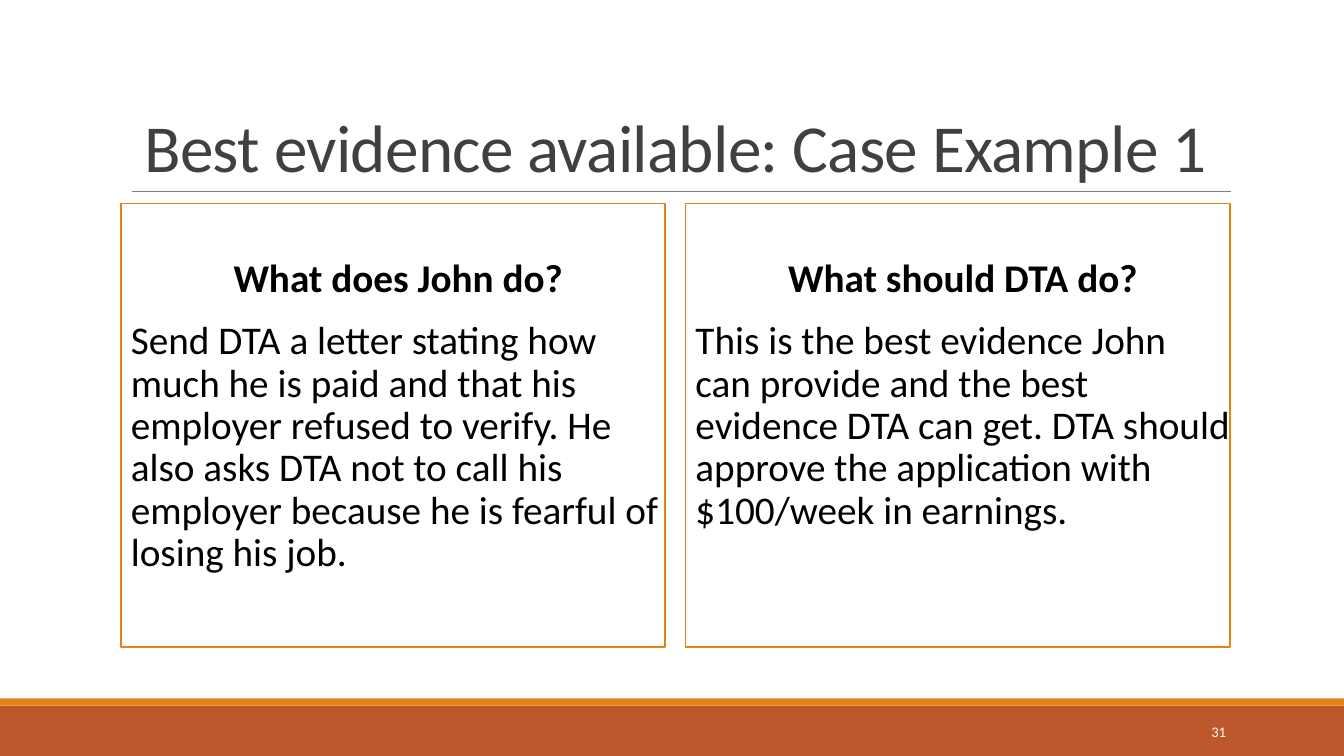
from pptx import Presentation, util as u
from pptx.dml.color import RGBColor
from pptx.enum import shapes, text
from pptx.oxml import ns
from lxml import etree

SCALE = 9144
CARDS = [
    ("What does John do?",
     "Send DTA a letter stating how much he is paid and that his employer refused to verify. "
     "He also asks DTA not to call his employer because he is fearful of losing his job."),
    ("What should DTA do?",
     "This is the best evidence John can provide and the best evidence DTA can get. "
     "DTA should approve the application with $100/week in earnings."),
]


def px(*lengths):
    return [u.Emu(n * SCALE) for n in lengths]


def color(value):
    return RGBColor.from_string(value)


def apply(target, formats):
    for name, value in formats.items():
        setattr(target, name, value)


def add_rect(s, box, fill, line=None):
    sp = s.shapes.add_shape(shapes.MSO_SHAPE.RECTANGLE, *px(*box))
    sp.shadow.inherit = False
    sp.fill.solid()
    sp.fill.fore_color.rgb = color(fill)
    if line:
        sp.line.color.rgb = color(line)
        sp.line.width = u.Pt(1.25)
    else:
        sp.line.fill.background()
    return sp


def add_rule(s, x1, y1, x2, y2):
    c = s.shapes.add_connector(shapes.MSO_CONNECTOR.STRAIGHT, *px(x1, y1, x2, y2))
    c.line.color.rgb = color("808080")
    c.line.width = u.Pt(0.5)
    etree.SubElement(c.element.spPr, ns.qn("a:effectLst"))


def write(p, words, size, fill, formats, bold=False):
    r = p.add_run()
    r.text = words
    apply(r.font, {"name": "Calibri", "size": u.Pt(size), "bold": bold})
    r.font.color.rgb = color(fill)
    apply(p, formats)
    return r


def frame(sp, anchor, margins=(10, 5, 10, 5)):
    tf = sp.text_frame
    left, top, right, bottom = px(*margins)
    apply(tf, {"word_wrap": True, "auto_size": text.MSO_AUTO_SIZE.NONE,
               "vertical_anchor": anchor, "margin_left": left, "margin_top": top,
               "margin_right": right, "margin_bottom": bottom})
    return tf


def set_title(s, words):
    sp = s.shapes.title
    apply(sp, dict(zip(("left", "top", "width", "height"), px(120, 31, 1100, 159))))
    tf = frame(sp, text.MSO_ANCHOR.BOTTOM)
    r = write(tf.paragraphs[0], words, 48, "404040",
              {"alignment": text.PP_ALIGN.CENTER, "line_spacing": 0.85})
    r.font._element.set("spc", "-50")


def add_card(s, left, heading, body):
    sp = add_rect(s, (left, 202, 540, 440), "FFFFFF", "E48312")
    tf = frame(sp, text.MSO_ANCHOR.TOP, (10, 55, 0, 5))
    spacing = {"line_spacing": 0.9, "space_after": u.Pt(2)}
    write(tf.paragraphs[0], heading, 28, "000000",
          {**spacing, "alignment": text.PP_ALIGN.CENTER, "space_before": u.Pt(0)}, True)
    write(tf.add_paragraph(), body, 28, "000000",
          {**spacing, "alignment": text.PP_ALIGN.LEFT, "space_before": u.Pt(12)})


def add_page_number(s, number):
    sp = s.shapes.add_textbox(*px(1083, 706, 143, 40))
    tf = frame(sp, text.MSO_ANCHOR.MIDDLE)
    write(tf.paragraphs[0], number, 10.5, "FFFFFF", {"alignment": text.PP_ALIGN.RIGHT})


def main():
    prs = Presentation()
    prs.slide_width, prs.slide_height = px(1333, 750)
    s = prs.slides.add_slide(prs.slide_layouts[5])
    add_rect(s, (0, 700, 1333, 50), "BD582C")
    add_rect(s, (0, 693, 1333, 7), "E48312")
    add_rule(s, 131, 190, 1221, 190)
    set_title(s, "Best evidence available: Case Example 1")
    for i, (heading, body) in enumerate(CARDS):
        add_card(s, 120 + i * 560, heading, body)
    add_page_number(s, "31")
    prs.save("out.pptx")


if __name__ == "__main__":
    main()
